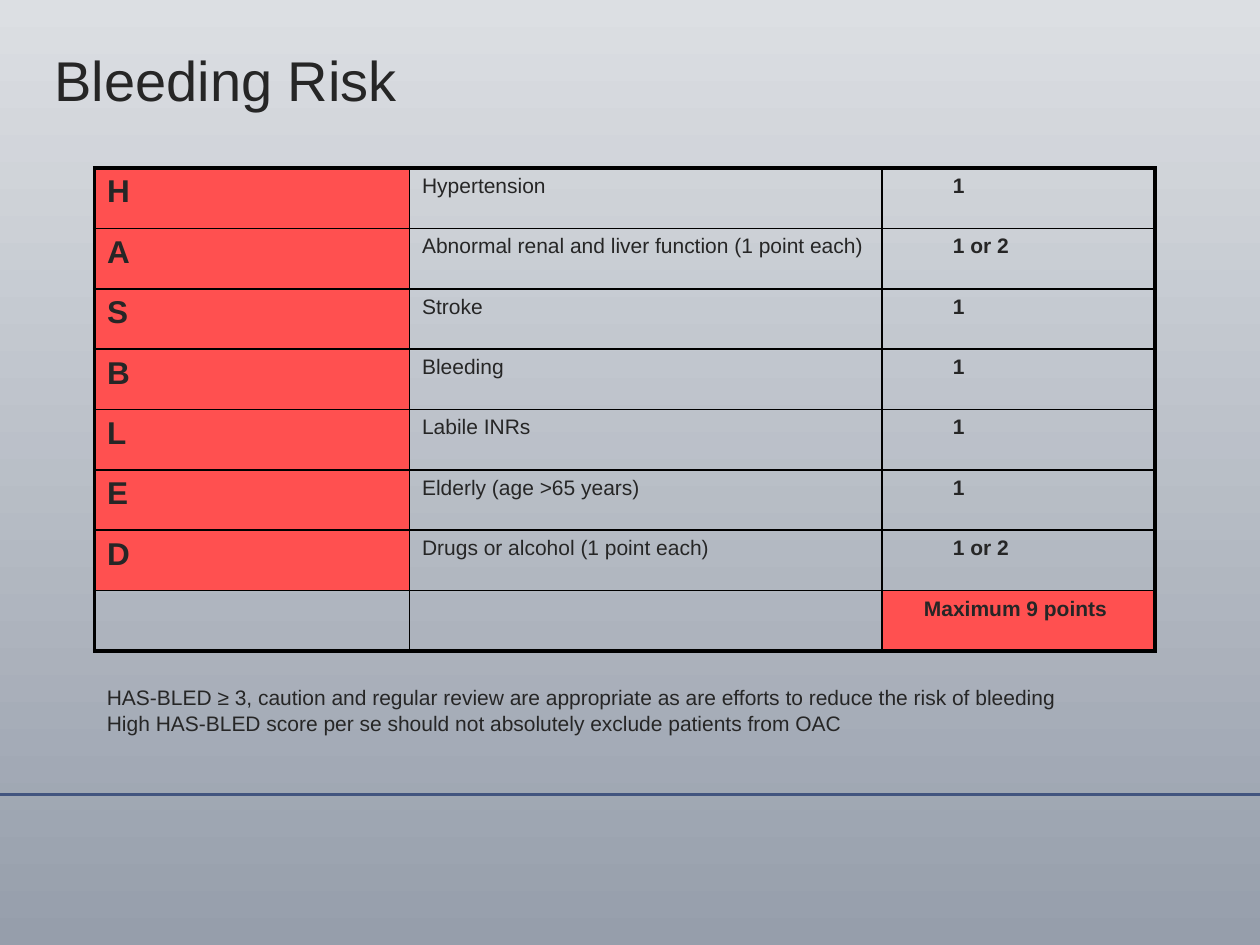
import pptx
import pptx.dml.color
import pptx.enum.shapes
import pptx.enum.text
import pptx.oxml.ns
import pptx.util
from lxml import etree

Pt = pptx.util.Pt
INK, RED, BLACK, RULE = "262626", "FF5050", "000000", "42557F"
SKY_TOP, SKY_BOTTOM = "DCDFE3", "969EAB"
FONT = "Arial"

SCORES = [
    ("H", "Hypertension", "1"),
    ("A", "Abnormal renal and liver function (1 point each)", "1 or 2"),
    ("S", "Stroke", "1"),
    ("B", "Bleeding", "1"),
    ("L", "Labile INRs", "1"),
    ("E", "Elderly (age >65 years)", "1"),
    ("D", "Drugs or alcohol (1 point each)", "1 or 2"),
    ("", "", "Maximum 9 points"),
]
NOTES = [
    "HAS-BLED ≥ 3, caution and regular review are appropriate as are efforts to reduce the risk of bleeding",
    "High HAS-BLED score per se should not absolutely exclude patients from OAC",
]


def colour(value):
    return pptx.dml.color.RGBColor.from_string(value)


def style_text(frame, size, bold=False):
    for para in frame.paragraphs:
        for span in para.runs:
            span.font.name = FONT
            span.font.size = Pt(size)
            span.font.bold = bold
            span.font.color.rgb = colour(INK)


def paint_background(page):
    fill = page.background.fill
    fill.gradient()
    fill.gradient_angle = 270
    for stop, value in zip(fill.gradient_stops, (SKY_TOP, SKY_BOTTOM)):
        stop.color.rgb = colour(value)


def add_rule(page, left, top, width):
    rule = page.shapes.add_connector(
        pptx.enum.shapes.MSO_CONNECTOR.STRAIGHT,
        Pt(left), Pt(top), Pt(left + width), Pt(top))
    rule.line.color.rgb = colour(RULE)
    rule.line.width = Pt(1.75)
    etree.SubElement(rule._element.spPr, pptx.oxml.ns.qn("a:effectLst"))


def add_text(page, left, top, width, height, lines, size):
    box = page.shapes.add_textbox(Pt(left), Pt(top), Pt(width), Pt(height))
    frame = box.text_frame
    frame.word_wrap = True
    frame.text = "\n".join(lines)
    for para in frame.paragraphs[1:]:
        para.space_before = Pt(0.5)
    style_text(frame, size)
    return frame


def set_borders(cell, widths):
    """Draw the left, right, top and bottom borders, ahead of the cell's fill."""
    properties = cell._tc.get_or_add_tcPr()
    for index, (side, width) in enumerate(zip("LRTB", widths)):
        line = etree.Element(pptx.oxml.ns.qn(f"a:ln{side}"), w=str(Pt(width)))
        fill = etree.SubElement(line, pptx.oxml.ns.qn("a:solidFill"))
        etree.SubElement(fill, pptx.oxml.ns.qn("a:srgbClr"), val=BLACK)
        properties.insert(index, line)


def add_score_table(page, left, top, width, height):
    last_row, last_column = len(SCORES) - 1, 2
    table = page.shapes.add_table(
        len(SCORES), 3, Pt(left), Pt(top), Pt(width), Pt(height)).table
    table.first_row = table.horz_banding = False
    for column, share in zip(table.columns, (180, 270, 156)):
        column.width = Pt(width * share / 606)
    for row_index, texts in enumerate(SCORES):
        table.rows[row_index].height = Pt(height / len(SCORES))
        for column_index, text in enumerate(texts):
            cell = table.cell(row_index, column_index)
            cell.text = text
            style_text(cell.text_frame, 18 if column_index == 0 else 12,
                       bold=column_index != 1)
            is_total = row_index == last_row
            if column_index == last_column:
                cell.margin_left = Pt(24 if is_total else 40.5)
            if text and (column_index == 0 or is_total):
                cell.fill.solid()
                cell.fill.fore_color.rgb = colour(RED)
            else:
                cell.fill.background()
            outer = (column_index == 0, column_index == last_column,
                     row_index == 0, is_total)
            set_borders(cell, [2.25 if edge else 1 for edge in outer])


def main():
    deck = pptx.Presentation()
    deck.slide_width, deck.slide_height = Pt(720), Pt(540)
    page = deck.slides.add_slide(deck.slide_layouts[6])
    paint_background(page)
    add_rule(page, 0, 454, 720)
    title = add_text(page, 24, 24, 672, 42.5, ["Bleeding Risk"], 32)
    title.vertical_anchor = pptx.enum.text.MSO_ANCHOR.MIDDLE
    add_score_table(page, 54, 96, 606, 276)
    add_text(page, 54, 387.5, 648, 36, NOTES, 12)
    deck.save("out.pptx")


if __name__ == "__main__":
    main()
